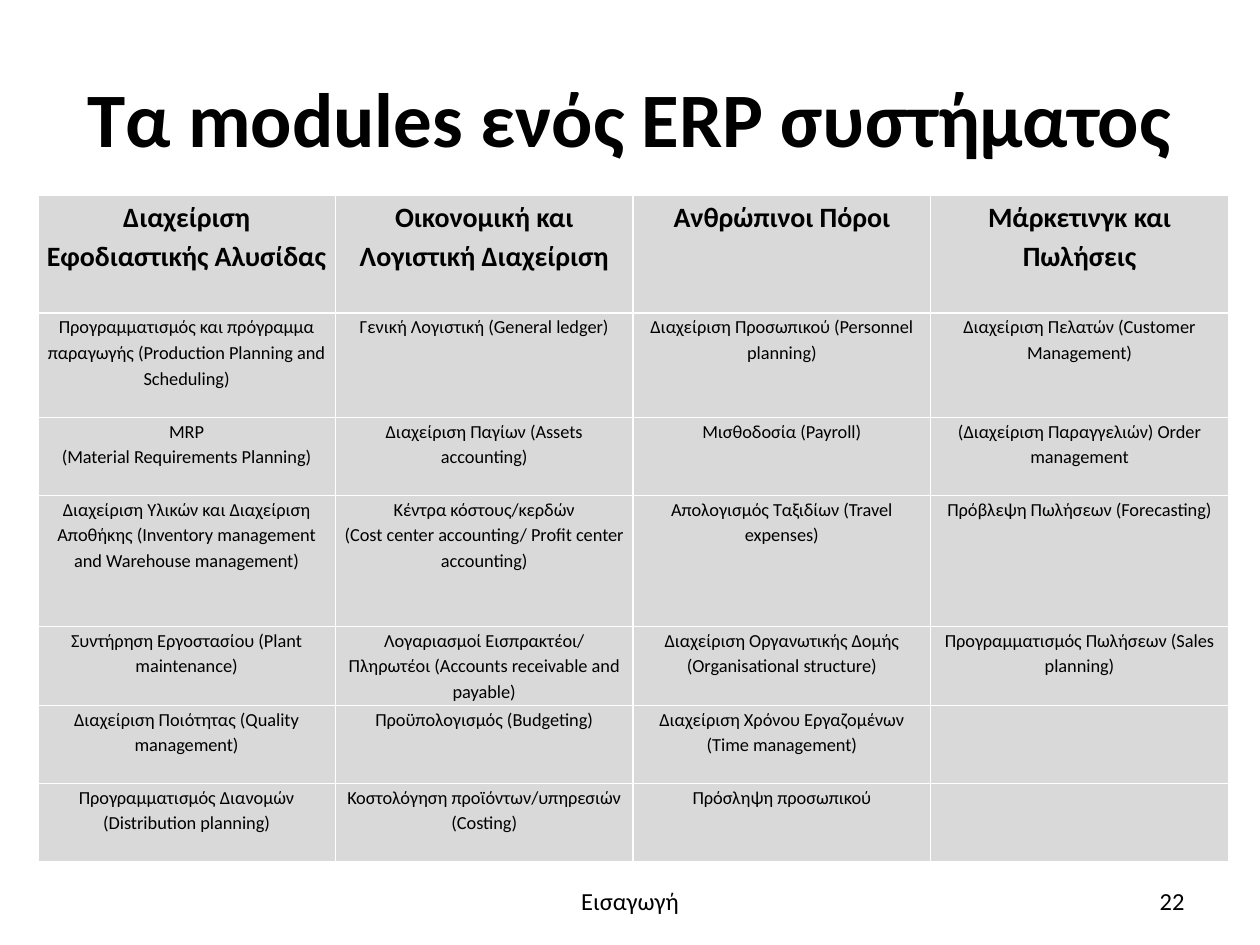
import pptx
import pptx.dml.color
import pptx.enum.text
import pptx.oxml
import pptx.oxml.ns
import pptx.util
from dataclasses import dataclass

Pt = pptx.util.Pt
Align = pptx.enum.text.PP_ALIGN
Anchor = pptx.enum.text.MSO_ANCHOR


@dataclass(frozen=True)
class Theme:
    font: str = "Calibri"
    text: str = "000000"
    cell: str = "D9D9D9"
    border: str = "FFFFFF"
    title_size: float = 44
    header_size: float = 16
    body_size: float = 10.5
    footer_size: float = 14


THEME = Theme()

TITLE = "Τα modules ενός ERP συστήματος"
HEADERS = [
    "Διαχείριση Εφοδιαστικής Αλυσίδας",
    "Οικονομική και Λογιστική Διαχείριση",
    "Ανθρώπινοι Πόροι",
    "Μάρκετινγκ και Πωλήσεις",
]
# A line break inside a cell starts a new paragraph.
MODULES = [
    ["Προγραμματισμός και πρόγραμμα παραγωγής (Production Planning and Scheduling)",
     "Γενική Λογιστική (General ledger)",
     "Διαχείριση Προσωπικού (Personnel planning)",
     "Διαχείριση Πελατών (Customer Management)"],
    ["MRP\n(Material Requirements Planning)",
     "Διαχείριση Παγίων (Assets accounting)",
     "Μισθοδοσία (Payroll)",
     "(Διαχείριση Παραγγελιών) Order management"],
    ["Διαχείριση Υλικών και Διαχείριση Αποθήκης (Inventory management and Warehouse management)",
     "Κέντρα κόστους/κερδών\n(Cost center accounting/ Profit center accounting)",
     "Απολογισμός Ταξιδίων (Travel expenses)",
     "Πρόβλεψη Πωλήσεων (Forecasting)"],
    ["Συντήρηση Εργοστασίου (Plant maintenance)",
     "Λογαριασμοί Εισπρακτέοι/ Πληρωτέοι (Accounts receivable and payable)",
     "Διαχείριση Οργανωτικής Δομής (Organisational structure)",
     "Προγραμματισμός Πωλήσεων (Sales planning)"],
    ["Διαχείριση Ποιότητας (Quality management)",
     "Προϋπολογισμός (Budgeting)",
     "Διαχείριση Χρόνου Εργαζομένων\n(Time management)",
     ""],
    ["Προγραμματισμός Διανομών\n(Distribution planning)",
     "Κοστολόγηση προϊόντων/υπηρεσιών (Costing)",
     "Πρόσληψη προσωπικού",
     ""],
]
ROW_HEIGHTS = [67.4, 59.5, 44.6, 75, 45, 44.6, 44.6]
TABLE_LEFT, TABLE_TOP, TABLE_WIDTH = 21.6, 111.6, 680.4
FOOTER_TOP, FOOTER_HEIGHT = 500.4, 28.8


def style_paragraph(paragraph, size, bold=False, align=Align.CENTER):
    paragraph.alignment = align
    font = paragraph.font
    font.name = THEME.font
    font.size = Pt(size)
    font.bold = bold
    font.color.rgb = pptx.dml.color.RGBColor.from_string(THEME.text)


def add_text(slide, text, left, top, width, height, size, **style):
    box = slide.shapes.add_textbox(Pt(left), Pt(top), Pt(width), Pt(height))
    frame = box.text_frame
    frame.word_wrap = True
    frame.vertical_anchor = Anchor.MIDDLE
    frame.text = text
    style_paragraph(frame.paragraphs[0], size, **style)


def add_borders(cell):
    """Insert the four border lines ahead of the fill, as the schema orders them."""
    properties = cell._tc.get_or_add_tcPr()
    for index, side in enumerate(("lnL", "lnR", "lnT", "lnB")):
        properties.insert(index, pptx.oxml.parse_xml(
            f'<a:{side} {pptx.oxml.ns.nsdecls("a")} w="{Pt(1)}"><a:solidFill>'
            f'<a:srgbClr val="{THEME.border}"/></a:solidFill></a:{side}>'))


def fill_cell(cell, text, size, bold):
    cell.margin_left = cell.margin_right = Pt(5)
    cell.margin_top = cell.margin_bottom = Pt(0)
    cell.fill.solid()
    cell.fill.fore_color.rgb = pptx.dml.color.RGBColor.from_string(THEME.cell)
    add_borders(cell)
    cell.text = text
    for paragraph in cell.text_frame.paragraphs:
        style_paragraph(paragraph, size, bold)
        paragraph.line_spacing = 1.15


def add_module_table(slide):
    rows = [HEADERS] + MODULES
    table = slide.shapes.add_table(
        len(rows), len(HEADERS), Pt(TABLE_LEFT), Pt(TABLE_TOP),
        Pt(TABLE_WIDTH), Pt(sum(ROW_HEIGHTS))).table
    table.first_row = table.horz_banding = False
    for column in table.columns:
        column.width = Pt(TABLE_WIDTH / len(HEADERS))
    for row_index, (texts, height) in enumerate(zip(rows, ROW_HEIGHTS)):
        table.rows[row_index].height = Pt(height)
        is_header = row_index == 0
        size = THEME.header_size if is_header else THEME.body_size
        for column_index, text in enumerate(texts):
            fill_cell(table.cell(row_index, column_index), text, size, is_header)


def main():
    presentation = pptx.Presentation()
    presentation.slide_width = Pt(720)
    presentation.slide_height = Pt(540)
    slide = presentation.slides.add_slide(presentation.slide_layouts[6])
    add_text(slide, TITLE, 0, 21.6, 720, 90, THEME.title_size, bold=True)
    add_module_table(slide)
    add_text(slide, "Εισαγωγή", 246, FOOTER_TOP, 228, FOOTER_HEIGHT, THEME.footer_size)
    add_text(slide, "22", 516, FOOTER_TOP, 168, FOOTER_HEIGHT, THEME.footer_size,
             align=Align.RIGHT)
    presentation.save("out.pptx")


if __name__ == "__main__":
    main()
